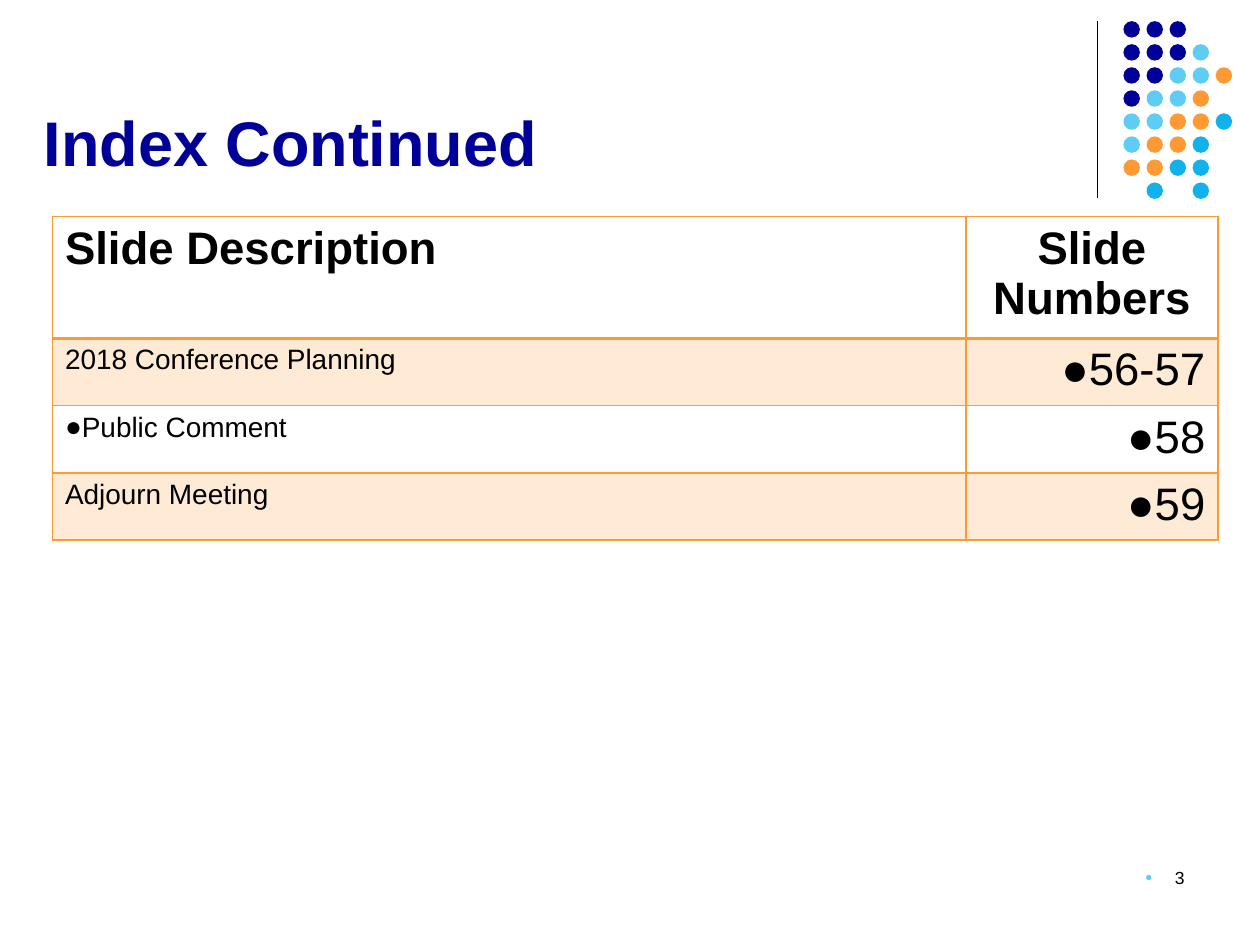
from dataclasses import dataclass

from lxml import etree
from pptx import Presentation
from pptx.dml.color import RGBColor
from pptx.enum import shapes, text
from pptx.oxml import ns
from pptx.util import Pt

COLORS = {
    "navy": "000099",
    "sky": "5ECCF3",
    "orange": "FF9933",
    "blue": "11B2EB",
    "black": "000000",
}
DOT_COLORS = {"n": "navy", "s": "sky", "o": "orange", "b": "blue"}
DOT_ROWS = ["nnn", "nnns", "nnsso", "nsso", "ssoob", "soob", "oobb", " b b"]
DOT_LEFT, DOT_TOP, DOT_SIZE, DOT_PITCH = 642, 12.1, 9.4, 13.17
COLUMN_WIDTHS = [522, 144]
ROW_HEIGHT = 29.2


@dataclass
class Entry:
    content: str
    size: float
    align: str = "LEFT"
    bold: bool = False
    bullet: bool = False


def rgb(name: str) -> RGBColor:
    return RGBColor.from_string(COLORS[name])


def sub(parent, tag: str, **attrs: str):
    return etree.SubElement(parent, ns.qn(tag), attrs)


def add_bullet(p, color: str = "", percent: int = 100, hang: float = 0) -> None:
    pPr = p._p.get_or_add_pPr()
    pPr.set("marL", str(Pt(hang)))
    pPr.set("indent", str(-Pt(hang)))
    if color:
        sub(sub(pPr, "a:buClr"), "a:srgbClr", val=COLORS[color])
    sub(pPr, "a:buSzPct", val=str(percent * 1000))
    sub(pPr, "a:buFont", typeface="Arial")
    sub(pPr, "a:buChar", char="●")


def write(p, entry: Entry, color: str = "black") -> None:
    p.text = entry.content
    p.alignment = text.PP_ALIGN[entry.align]
    p.font.name = "Arial"
    p.font.size = Pt(entry.size)
    p.font.bold = entry.bold
    p.font.color.rgb = rgb(color)


def add_textbox(s, left: float, top: float, width: float, height: float, anchor: str):
    tf = s.shapes.add_textbox(Pt(left), Pt(top), Pt(width), Pt(height)).text_frame
    tf.word_wrap = True
    tf.vertical_anchor = text.MSO_ANCHOR[anchor]
    return tf.paragraphs[0]


def add_divider(s) -> None:
    line = s.shapes.add_connector(
        shapes.MSO_CONNECTOR.STRAIGHT, Pt(627), Pt(12), Pt(627), Pt(113)
    )
    line.line.color.rgb = rgb("black")
    line.line.width = Pt(0.75)
    sub(line._element.spPr, "a:effectLst")


def add_dots(s) -> None:
    group = s.shapes.add_group_shape()
    for row, codes in enumerate(DOT_ROWS):
        for col, code in enumerate(codes):
            if code == " ":
                continue
            sp = group.shapes.add_shape(
                shapes.MSO_SHAPE.OVAL,
                Pt(DOT_LEFT + col * DOT_PITCH),
                Pt(DOT_TOP + row * DOT_PITCH),
                Pt(DOT_SIZE),
                Pt(DOT_SIZE),
            )
            sp.shadow.inherit = False
            sp.fill.solid()
            sp.fill.fore_color.rgb = rgb(DOT_COLORS[code])
            sp.line.fill.background()


def style_cell(cell, row: int) -> None:
    tcPr = cell._tc.get_or_add_tcPr()
    widths = {"L": 1, "R": 1, "T": 2 if row == 1 else 1, "B": 2 if row == 0 else 1}
    for side, width in widths.items():
        ln = sub(tcPr, f"a:ln{side}", w=str(Pt(width)))
        sub(sub(ln, "a:solidFill"), "a:srgbClr", val=COLORS["orange"])
    if row % 2:
        cell.fill.solid()
        cell.fill.fore_color.rgb = rgb("orange")
        sub(tcPr.find(ns.qn("a:solidFill"))[0], "a:alpha", val="20000")
    else:
        cell.fill.background()


def add_index(s, rows: list[list[Entry]]) -> None:
    table = s.shapes.add_table(
        len(rows), len(COLUMN_WIDTHS), Pt(30), Pt(123.75),
        Pt(sum(COLUMN_WIDTHS)), Pt(ROW_HEIGHT * len(rows)),
    ).table
    table.first_row = False
    table.horz_banding = False
    for column, width in zip(table.columns, COLUMN_WIDTHS):
        column.width = Pt(width)
    for i, entries in enumerate(rows):
        for j, entry in enumerate(entries):
            cell = table.cell(i, j)
            style_cell(cell, i)
            p = cell.text_frame.paragraphs[0]
            if entry.bullet:
                add_bullet(p)
            write(p, entry)


def main() -> None:
    prs = Presentation()
    prs.slide_width, prs.slide_height = Pt(720), Pt(540)
    s = prs.slides.add_slide(prs.slide_layouts[6])

    add_divider(s)
    add_dots(s)
    title = add_textbox(s, 18, 19.5, 606, 86.4, "BOTTOM")
    write(title, Entry("Index Continued", 36, bold=True), "navy")

    add_index(s, [
        [Entry("Slide Description", 26, bold=True),
         Entry("Slide Numbers", 26, "CENTER", bold=True)],
        [Entry("2018 Conference Planning", 16),
         Entry("56-57", 26, "RIGHT", bullet=True)],
        [Entry("Public Comment", 16, bullet=True),
         Entry("58", 26, "RIGHT", bullet=True)],
        [Entry("Adjourn Meeting", 16),
         Entry("59", 26, "RIGHT", bullet=True)],
    ])

    number = add_textbox(s, 516, 492, 168, 36, "TOP")
    add_bullet(number, "sky", 70, 17)
    write(number, Entry("3", 10, "RIGHT"))
    prs.save("out.pptx")


if __name__ == "__main__":
    main()
